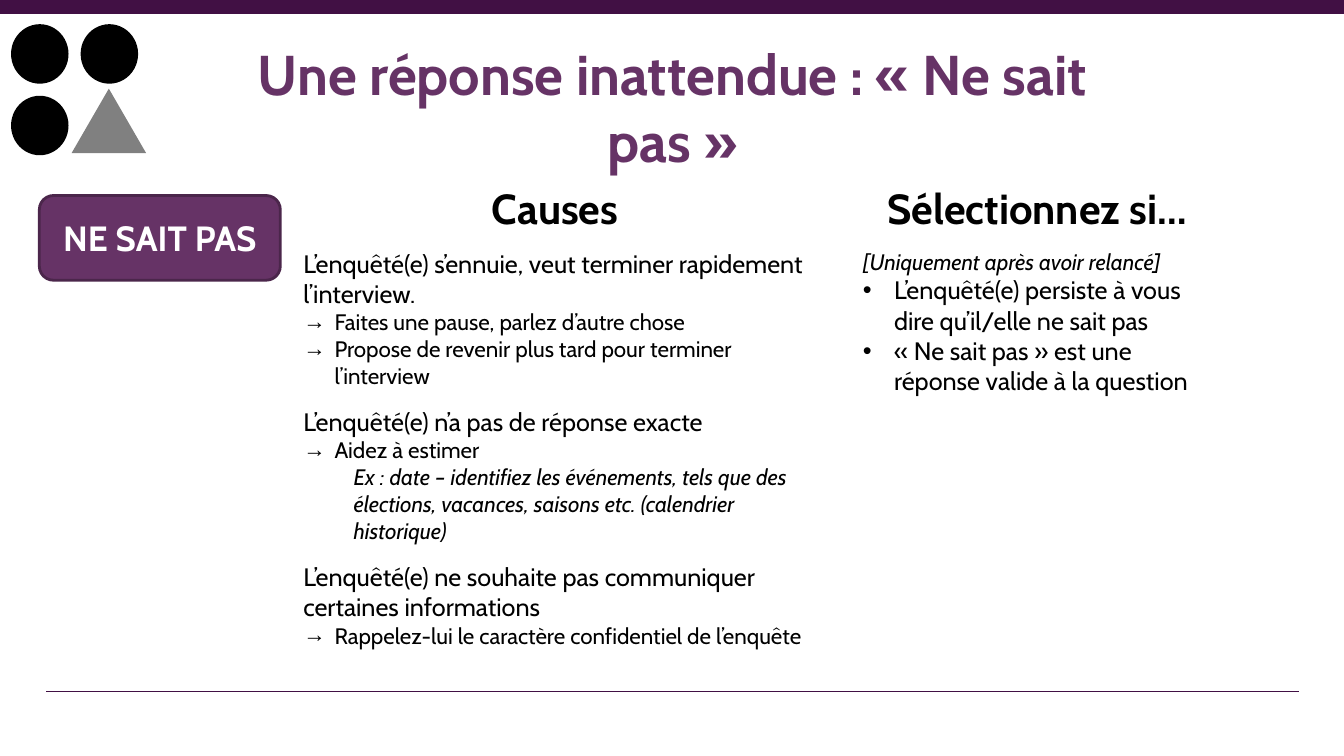
from dataclasses import dataclass

from lxml import etree
from pptx import Presentation
from pptx.dml.color import RGBColor
from pptx.enum.shapes import MSO_CONNECTOR, MSO_SHAPE
from pptx.enum.text import MSO_ANCHOR, PP_ALIGN
from pptx.oxml.ns import qn
from pptx.util import Inches, Pt


@dataclass(frozen=True)
class Theme:
    font: str = "Cabin"
    black: str = "000000"
    white: str = "FFFFFF"
    grey: str = "808080"
    purple: str = "663366"
    border: str = "4B264B"
    rule: str = "411044"
    title: float = 40
    heading: float = 30
    label: float = 25
    body: float = 18
    detail: float = 16


class SlideBuilder:
    def __init__(self, slide, theme):
        self.shapes = slide.shapes
        self.theme = theme

    def line(self, x1, y1, x2, y2, width):
        c = self.shapes.add_connector(MSO_CONNECTOR.STRAIGHT, Inches(x1), Inches(y1),
                                      Inches(x2), Inches(y2))
        c.line.color.rgb = RGBColor.from_string(self.theme.rule)
        c.line.width = Pt(width)
        etree.SubElement(c._element.spPr, qn("a:effectLst"))

    def shape(self, kind, x, y, w, h, fill, border=None, parent=None):
        sp = (parent or self.shapes).add_shape(kind, Inches(x), Inches(y), Inches(w), Inches(h))
        sp.shadow.inherit = False
        sp.fill.solid()
        sp.fill.fore_color.rgb = RGBColor.from_string(fill)
        if border:
            sp.line.color.rgb = RGBColor.from_string(border)
            sp.line.width = Pt(2)
        else:
            sp.line.fill.background()
        return sp

    def run(self, p, text, size, color=None, bold=False, italic=False):
        r = p.add_run()
        r.text = text
        r.font.name = self.theme.font
        r.font.size = Pt(size)
        r.font.bold = bold
        r.font.italic = italic
        r.font.color.rgb = RGBColor.from_string(color or self.theme.black)

    def indent(self, p, left, first=0, bullet=None):
        """Set margins in inches and, if given, a bullet character."""
        pPr = p._p.get_or_add_pPr()
        pPr.set("marL", str(Inches(left)))
        pPr.set("indent", str(Inches(first)))
        if bullet:
            etree.SubElement(pPr, qn("a:buFont")).set("typeface", "Arial")
            etree.SubElement(pPr, qn("a:buChar")).set("char", bullet)

    def box(self, x, y, w, h):
        tf = self.shapes.add_textbox(Inches(x), Inches(y), Inches(w), Inches(h)).text_frame
        tf.word_wrap = True
        return tf

    def centred(self, tf, text, size, color=None):
        p = tf.paragraphs[0]
        p.alignment = PP_ALIGN.CENTER
        self.run(p, text, size, color, bold=True)

    def button(self, x, y, w, h, text):
        t = self.theme
        tf = self.shape(MSO_SHAPE.ROUNDED_RECTANGLE, x, y, w, h, t.purple, t.border).text_frame
        tf.word_wrap = True
        tf.vertical_anchor = MSO_ANCHOR.MIDDLE
        self.centred(tf, text, t.label, t.white)

    def paragraphs(self, x, y, w, h, items):
        """Fill a text box from (style, text) pairs."""
        t = self.theme
        tf = self.box(x, y, w, h)
        for i, (style, text) in enumerate(items):
            p = tf.add_paragraph() if i else tf.paragraphs[0]
            if style == "arrow":
                self.indent(p, 0.31, -0.31, "→")
            elif style == "bullet":
                self.indent(p, 0.31, -0.31, "•")
            elif style == "example":
                p.level = 1
                self.indent(p, 0.5)
            size = t.body if style in ("body", "bullet") else t.detail
            self.run(p, text, size, italic=style in ("example", "note"))

    def odd_one_out(self):
        """Three circles and one triangle, grouped."""
        group = self.shapes.add_group_shape().shapes
        for x, y in ((0.11, 0.24), (0.8, 0.24), (0.11, 0.95)):
            self.shape(MSO_SHAPE.OVAL, x, y, 0.57, 0.59, self.theme.black, parent=group)
        self.shape(MSO_SHAPE.ISOSCELES_TRIANGLE, 0.71, 0.88, 0.74, 0.64,
                   self.theme.grey, parent=group)


CAUSES = [
    (2.41, 1.51, [
        ("body", "L’enquêté(e) s’ennuie, veut terminer rapidement l’interview."),
        ("arrow", "Faites une pause, parlez d’autre chose"),
        ("arrow", "Propose de revenir plus tard pour terminer l’interview")]),
    (3.98, 1.48, [
        ("body", "L’enquêté(e) n’a pas de réponse exacte"),
        ("arrow", "Aidez à estimer"),
        ("example", "Ex : date – identifiez les événements, tels que des élections, "
                    "vacances, saisons etc. (calendrier historique)")]),
    (5.52, 1.25, [
        ("body", "L’enquêté(e) ne souhaite pas communiquer certaines informations"),
        ("arrow", "Rappelez-lui le caractère confidentiel de l’enquête")]),
]
CONDITIONS = [
    ("note", "[Uniquement après avoir relancé]"),
    ("bullet", "L’enquêté(e) persiste à vous dire qu’il/elle ne sait pas"),
    ("bullet", "« Ne sait pas » est une réponse valide à la question"),
]


def main():
    prs = Presentation()
    prs.slide_width, prs.slide_height = Inches(13.33), Inches(7.5)
    theme = Theme()
    s = SlideBuilder(prs.slides.add_slide(prs.slide_layouts[6]), theme)

    s.line(12.88, 6.86, 0.46, 6.86, 1.25)
    s.line(0, 0.07, 13.35, 0.07, 10.25)
    s.centred(s.box(2.28, 0.34, 8.78, 0.95),
              "Une réponse inattendue : « Ne sait pas »", theme.title, theme.purple)
    s.odd_one_out()
    s.button(0.39, 1.94, 2.39, 0.84, "NE SAIT PAS")
    for x, w, heading in ((4.2, 2.61, "Causes"), (8.27, 4.04, "Sélectionnez si…")):
        s.centred(s.box(x, 1.76, w, 0.61), heading, theme.heading)
    for y, h, items in CAUSES:
        s.paragraphs(2.91, y, 5.2, h, items)
    s.paragraphs(8.46, 2.41, 3.67, 1.58, CONDITIONS)

    prs.save("out.pptx")


if __name__ == "__main__":
    main()
